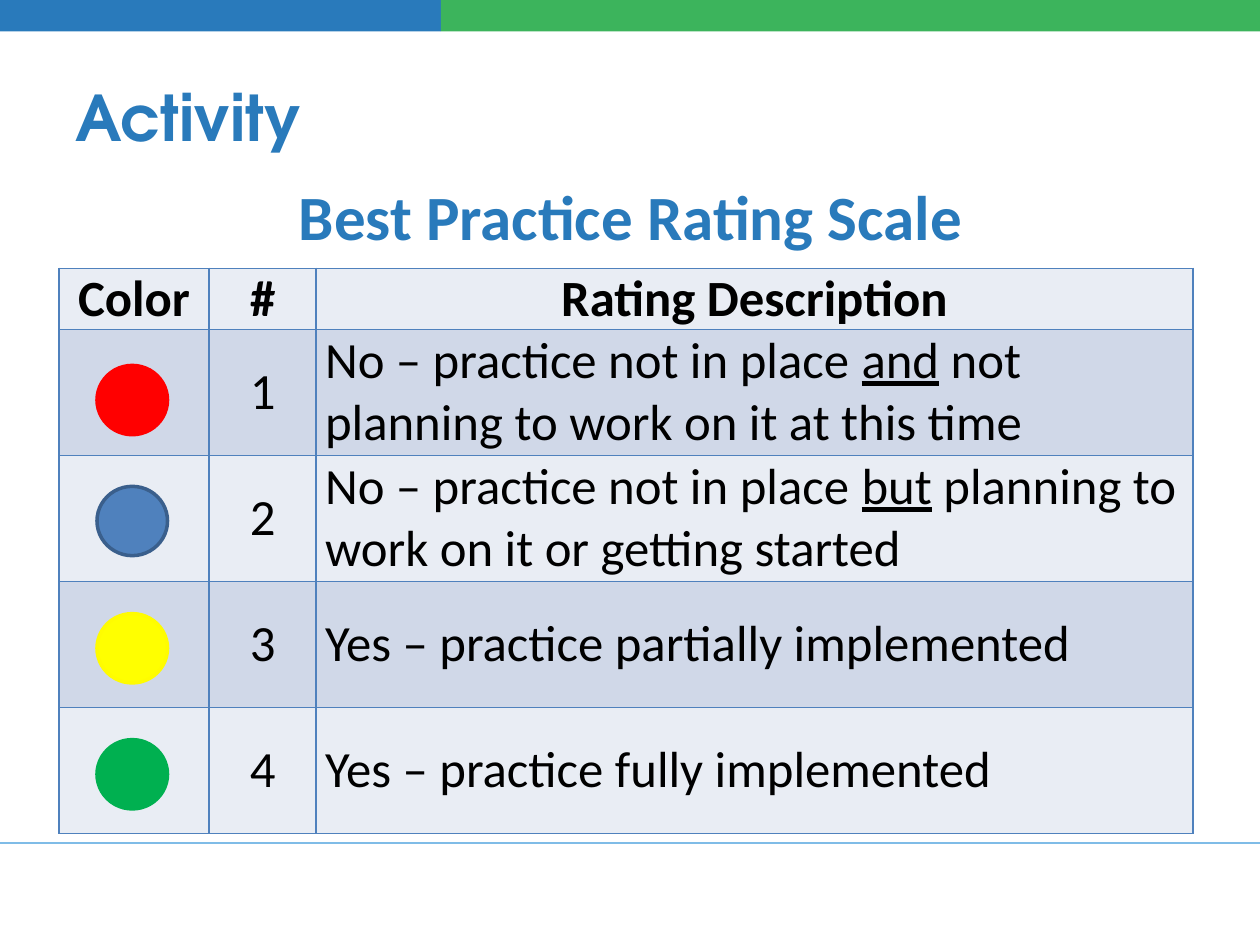
from lxml.etree import SubElement
from pptx import Presentation
from pptx.dml.color import RGBColor
from pptx.enum.shapes import MSO_CONNECTOR, MSO_SHAPE
from pptx.enum.text import MSO_ANCHOR, MSO_AUTO_SIZE, PP_ALIGN
from pptx.oxml.ns import qn
from pptx.util import Inches, Pt

BLUE = RGBColor(0x29, 0x7A, 0xBB)
GREEN = RGBColor(0x3C, 0xB4, 0x5C)
LIGHT_BLUE = RGBColor(0x7F, 0xBC, 0xE7)
BLACK = RGBColor(0, 0, 0)
BORDER = RGBColor(0x4F, 0x81, 0xBD)
BANDS = [RGBColor(0xE9, 0xED, 0xF4), RGBColor(0xD0, 0xD8, 0xE8)]

HEADERS = ["Color", "#", "Rating Description"]
DESCRIPTIONS = [
    ["No – practice not in place ", "and", " not planning to work on it at this time"],
    ["No – practice not in place ", "but", " planning to work on it or getting started"],
    ["Yes – practice partially implemented"],
    ["Yes – practice fully implemented"],
]
COLUMN_WIDTHS = [1.19, 0.85, 6.96]
ROW_HEIGHTS = [0.48, 1, 1, 1, 1]
RATING_DOTS = [
    (2.9, RGBColor(0xFF, 0, 0), RGBColor(0xFF, 0, 0)),
    (3.86, BORDER, RGBColor(0x3A, 0x5F, 0x8C)),
    (4.87, RGBColor(0xFF, 0xFF, 0), RGBColor(0xFF, 0xFC, 0)),
    (5.87, RGBColor(0, 0xB0, 0x50), RGBColor(0, 0xB0, 0x50)),
]


def format_font(font, name, size, color, bold=False):
    font.name = name
    font.size = Pt(size)
    font.color.rgb = color
    font.bold = bold


def add_filled_shape(slide, kind, left, top, width, height, fill, line=None):
    shape = slide.shapes.add_shape(
        kind, Inches(left), Inches(top), Inches(width), Inches(height))
    shape.shadow.inherit = False
    shape.fill.solid()
    shape.fill.fore_color.rgb = fill
    if line is None:
        shape.line.fill.background()
    else:
        shape.line.color.rgb = line
        shape.line.width = Pt(2)


def add_footer_line(slide):
    connector = slide.shapes.add_connector(
        MSO_CONNECTOR.STRAIGHT, Inches(0), Inches(6.69), Inches(10), Inches(6.69))
    connector.line.color.rgb = LIGHT_BLUE
    connector.line.width = Pt(1.5)
    SubElement(connector._element.spPr, qn("a:effectLst"))


def set_title(slide, text):
    title = slide.shapes.title
    title.left, title.top = Inches(0.5), Inches(0.3)
    title.width, title.height = Inches(9), Inches(1.25)
    title.text_frame.text = text
    title.text_frame.vertical_anchor = MSO_ANCHOR.MIDDLE
    paragraph = title.text_frame.paragraphs[0]
    paragraph.alignment = PP_ALIGN.LEFT
    format_font(paragraph.runs[0].font, "TeX Gyre Adventor", 36, BLUE, True)


def add_heading(slide, text):
    box = slide.shapes.add_textbox(
        Inches(2.24), Inches(1.35), Inches(5.53), Inches(0.71))
    frame = box.text_frame
    frame.text = text
    frame.word_wrap = False
    frame.auto_size = MSO_AUTO_SIZE.SHAPE_TO_FIT_TEXT
    frame.vertical_anchor = MSO_ANCHOR.MIDDLE
    paragraph = frame.paragraphs[0]
    paragraph.alignment = PP_ALIGN.CENTER
    format_font(paragraph.runs[0].font, "Calibri", 36, BLUE, True)


def add_borders(cell):
    properties = cell._tc.get_or_add_tcPr()
    for side in ("lnL", "lnR", "lnT", "lnB"):
        line = SubElement(properties, qn(f"a:{side}"), w=str(Pt(1)))
        fill = SubElement(line, qn("a:solidFill"))
        SubElement(fill, qn("a:srgbClr"), val=str(BORDER))


def style_cell(cell, band):
    add_borders(cell)
    cell.fill.solid()
    cell.fill.fore_color.rgb = band
    cell.margin_left = cell.margin_right = Inches(0.07)
    cell.margin_top = cell.margin_bottom = 0


def fill_cell(cell, parts, alignment, anchor, bold=False):
    cell.vertical_anchor = anchor
    paragraph = cell.text_frame.paragraphs[0]
    paragraph.alignment = alignment
    for index, part in enumerate(parts):
        run = paragraph.add_run()
        run.text = part
        format_font(run.font, "Calibri", 29, BLACK, bold)
        run.font.underline = index == 1


def add_rating_table(slide):
    table = slide.shapes.add_table(
        len(ROW_HEIGHTS), len(COLUMN_WIDTHS), Inches(0.47), Inches(2.13),
        Inches(sum(COLUMN_WIDTHS)), Inches(sum(ROW_HEIGHTS))).table
    for column, width in zip(table.columns, COLUMN_WIDTHS):
        column.width = Inches(width)
    for index, (row, height) in enumerate(zip(table.rows, ROW_HEIGHTS)):
        row.height = Inches(height)
        for cell in row.cells:
            style_cell(cell, BANDS[index % 2])
    for column, header in enumerate(HEADERS):
        fill_cell(table.cell(0, column), [header], PP_ALIGN.CENTER, MSO_ANCHOR.TOP, True)
    for rating, parts in enumerate(DESCRIPTIONS, start=1):
        fill_cell(table.cell(rating, 1), [str(rating)], PP_ALIGN.CENTER, MSO_ANCHOR.MIDDLE)
        fill_cell(table.cell(rating, 2), parts, PP_ALIGN.LEFT, MSO_ANCHOR.MIDDLE)


def main():
    presentation = Presentation()
    presentation.slide_width = Inches(10)
    presentation.slide_height = Inches(7.5)
    slide = presentation.slides.add_slide(presentation.slide_layouts[5])
    add_footer_line(slide)
    add_filled_shape(slide, MSO_SHAPE.RECTANGLE, 0, 0, 3.5, 0.25, BLUE)
    add_filled_shape(slide, MSO_SHAPE.RECTANGLE, 3.5, 0, 6.5, 0.25, GREEN)
    set_title(slide, "Activity")
    add_heading(slide, "Best Practice Rating Scale")
    add_rating_table(slide)
    for top, fill, line in RATING_DOTS:
        add_filled_shape(slide, MSO_SHAPE.OVAL, 0.77, top, 0.56, 0.55, fill, line)
    presentation.save("out.pptx")


if __name__ == "__main__":
    main()
